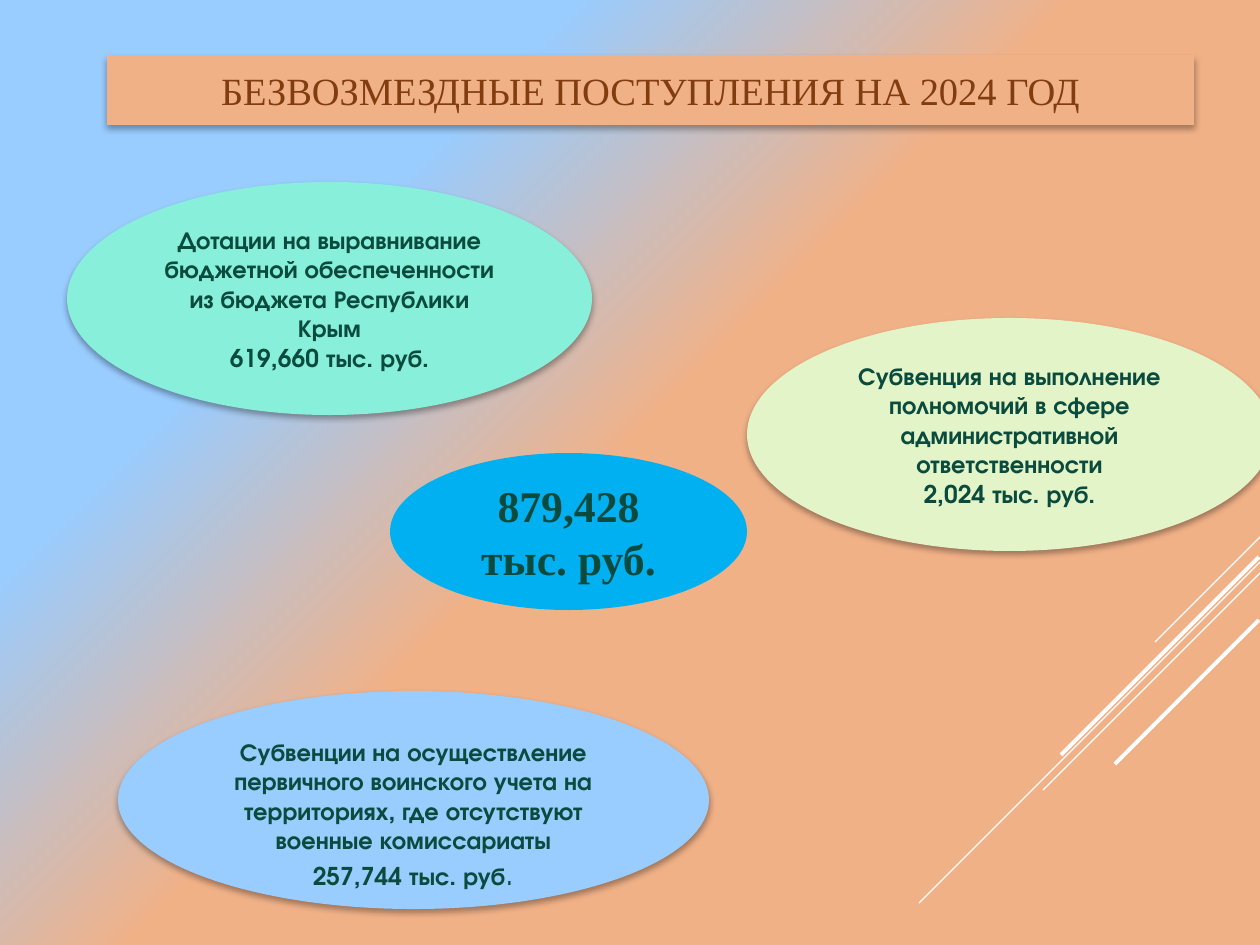
import dataclasses

import lxml.etree
import pptx
import pptx.dml.color
import pptx.enum.shapes
import pptx.enum.text
import pptx.oxml.ns
import pptx.util

PX = 914400 / 126


@dataclasses.dataclass(frozen=True)
class Theme:
    """Colours, fonts and type sizes of the slide."""
    peach: str = "F1B187"
    sky: str = "99CCFF"
    mint: str = "87EFDA"
    lime: str = "E3F4C9"
    blue: str = "00B0F0"
    white: str = "FFFFFF"
    brown: str = "813C0F"
    dark: str = "0A4B3E"
    serif: str = "Times New Roman"
    sans: str = "TeX Gyre Adventor"
    head: int = 22
    sum: int = 25
    text: int = 14
    dot: int = 18


THEME = Theme()


def emu(*sizes):
    """Turn px lengths into EMU."""
    return [pptx.util.Emu(round(size * PX)) for size in sizes]


def color(code):
    """Return the colour for a hex code."""
    return pptx.dml.color.RGBColor.from_string(code)


def shade(shape):
    """Give a shape a soft shadow that falls downwards."""
    shape.shadow.inherit = False
    name = pptx.oxml.ns.qn
    effects = shape.element.spPr.find(name("a:effectLst"))
    outer = lxml.etree.SubElement(
        effects, name("a:outerShdw"), blurRad="44450", dist="27940",
        dir="5400000", algn="ctr", rotWithShape="0")
    black = lxml.etree.SubElement(outer, name("a:srgbClr"), val="000000")
    lxml.etree.SubElement(black, name("a:alpha"), val="32000")


def style(par, face, size, code, bold):
    """Centre a paragraph and set its font."""
    par.alignment = pptx.enum.text.PP_ALIGN.CENTER
    font = par.font
    font.name, font.size, font.bold = face, pptx.util.Pt(size), bold
    font.color.rgb = color(code)


def paint(shape, code):
    """Fill a shape, drop its outline and centre its text vertically."""
    shape.fill.solid()
    shape.fill.fore_color.rgb = color(code)
    shape.line.fill.background()
    shape.text_frame.word_wrap = True
    shape.text_frame.vertical_anchor = pptx.enum.text.MSO_ANCHOR.MIDDLE


def backdrop(slide):
    """Blend the background from sky to peach along the diagonal."""
    fill = slide.background.fill
    fill.gradient()
    fill.gradient_angle = 315
    stops = ((0.26, THEME.sky), (0.49, THEME.peach))
    for stop, (place, code) in zip(fill.gradient_stops, stops):
        stop.position = place
        stop.color.rgb = color(code)


def rays(slide, box):
    """Draw diagonal rays from the right edge of the box."""
    left, top, width, height = box
    for gap, drop, size, weight in (
            (0, 0, 105, 0.75), (0, 25, 341, 0.75), (0, 36, 217, 0.75),
            (1, 20, 198, 2.25), (1, 83, 144, 2.25)):
        x, y = left + width - gap, top + drop
        ray = slide.shapes.add_connector(
            pptx.enum.shapes.MSO_CONNECTOR.STRAIGHT,
            *emu(x, y, x - size, y + size))
        ray.line.color.rgb = color(THEME.white)
        ray.line.width = pptx.util.Pt(weight)
        lxml.etree.SubElement(ray.element.spPr,
                              pptx.oxml.ns.qn("a:effectLst"))


def banner(slide, box, text):
    """Place the title as a filled band."""
    title = slide.shapes.title
    title.left, title.top, title.width, title.height = emu(*box)
    paint(title, THEME.peach)
    shade(title)
    title.text_frame.text = text
    style(title.text_frame.paragraphs[0],
          THEME.serif, THEME.head, THEME.brown, False)


def bubble(slide, box, code, lines, face=THEME.sans, size=THEME.text):
    """Place an ellipse with centred bold lines."""
    oval = slide.shapes.add_shape(
        pptx.enum.shapes.MSO_SHAPE.OVAL, *emu(*box))
    paint(oval, code)
    oval.shadow.inherit = False
    oval.text_frame.text = "\n".join(lines)
    for par in oval.text_frame.paragraphs:
        style(par, face, size, THEME.dark, True)
    return oval


def grants(slide, box):
    """Place the total and the three sources around it."""
    left, top = box[:2]
    bubble(slide, (left + 323, top + 271, 357, 157), THEME.blue,
           ["879,428 тыс. руб."], THEME.serif, THEME.sum)
    army = bubble(
        slide, (left + 51, top + 509, 591, 218), THEME.sky,
        ["Субвенции на осуществление первичного воинского учета на "
         "территориях, где отсутствуют военные комиссариаты",
         "257,744 тыс. руб"])
    army.text_frame.margin_top = emu(35)[0]
    dot = army.text_frame.paragraphs[-1].add_run()
    dot.text = "."
    dot.font.size, dot.font.bold = pptx.util.Pt(THEME.dot), False
    level = bubble(
        slide, (left, top, 525, 233), THEME.mint,
        ["Дотации на выравнивание бюджетной обеспеченности из бюджета "
         "Республики Крым", "619,660 тыс. руб."])
    duty = bubble(
        slide, (left + 680, top + 136, 525, 233), THEME.lime,
        ["Субвенция на выполнение полномочий в сфере административной "
         "ответственности", "2,024 тыс. руб."])
    for oval in (army, level, duty):
        shade(oval)


def main():
    """Build the slide and save it."""
    deck = pptx.Presentation()
    deck.slide_width, deck.slide_height = emu(1260, 945)
    slide = deck.slides.add_slide(deck.slide_layouts[5])
    backdrop(slide)
    rays(slide, (919, 537, 341, 366))
    banner(slide, (107, 55, 1087, 70),
           "БЕЗВОЗМЕЗДНЫЕ ПОСТУПЛЕНИЯ НА 2024 ГОД")
    grants(slide, (67, 182, 1205, 727))
    deck.save("out.pptx")


if __name__ == "__main__":
    main()
